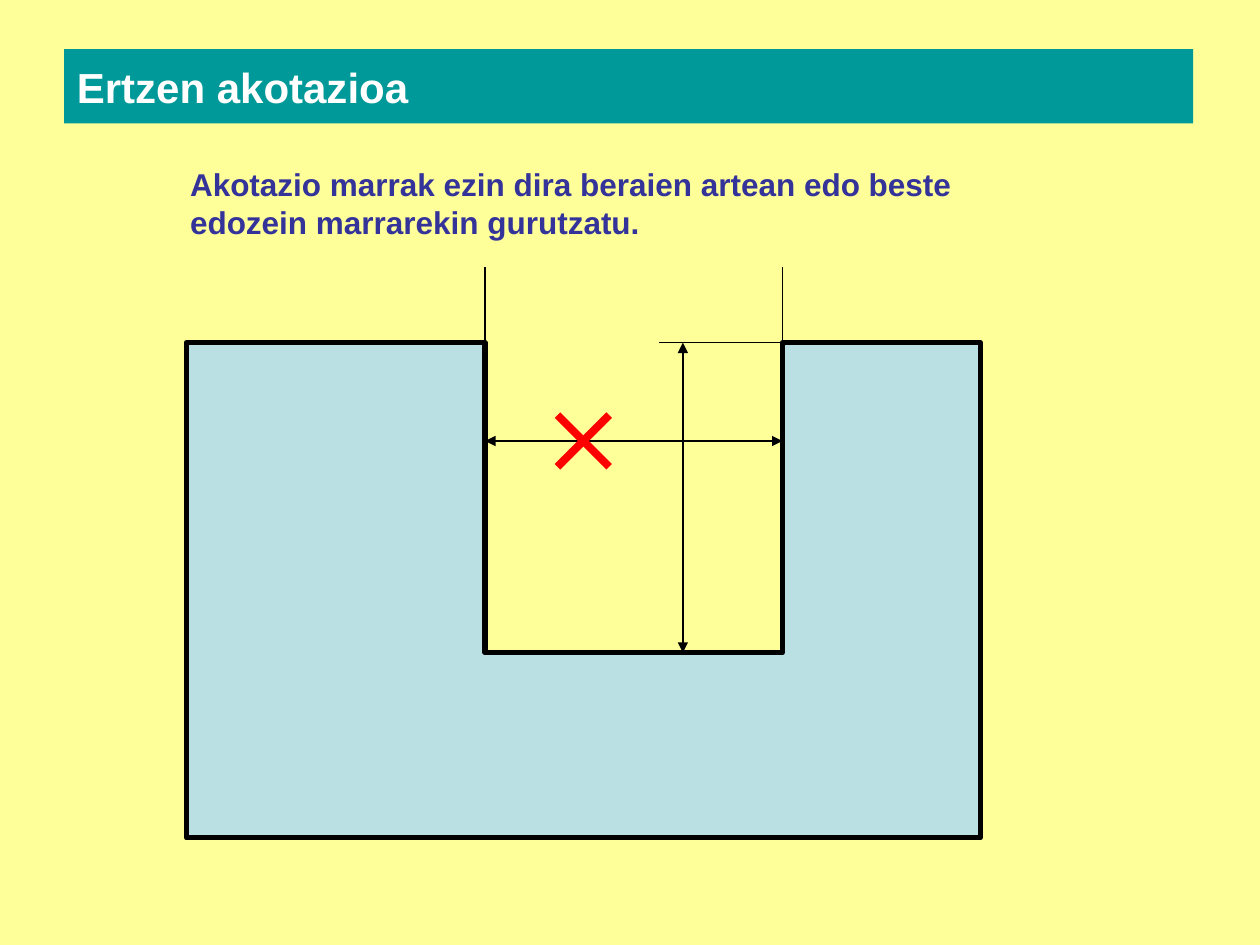
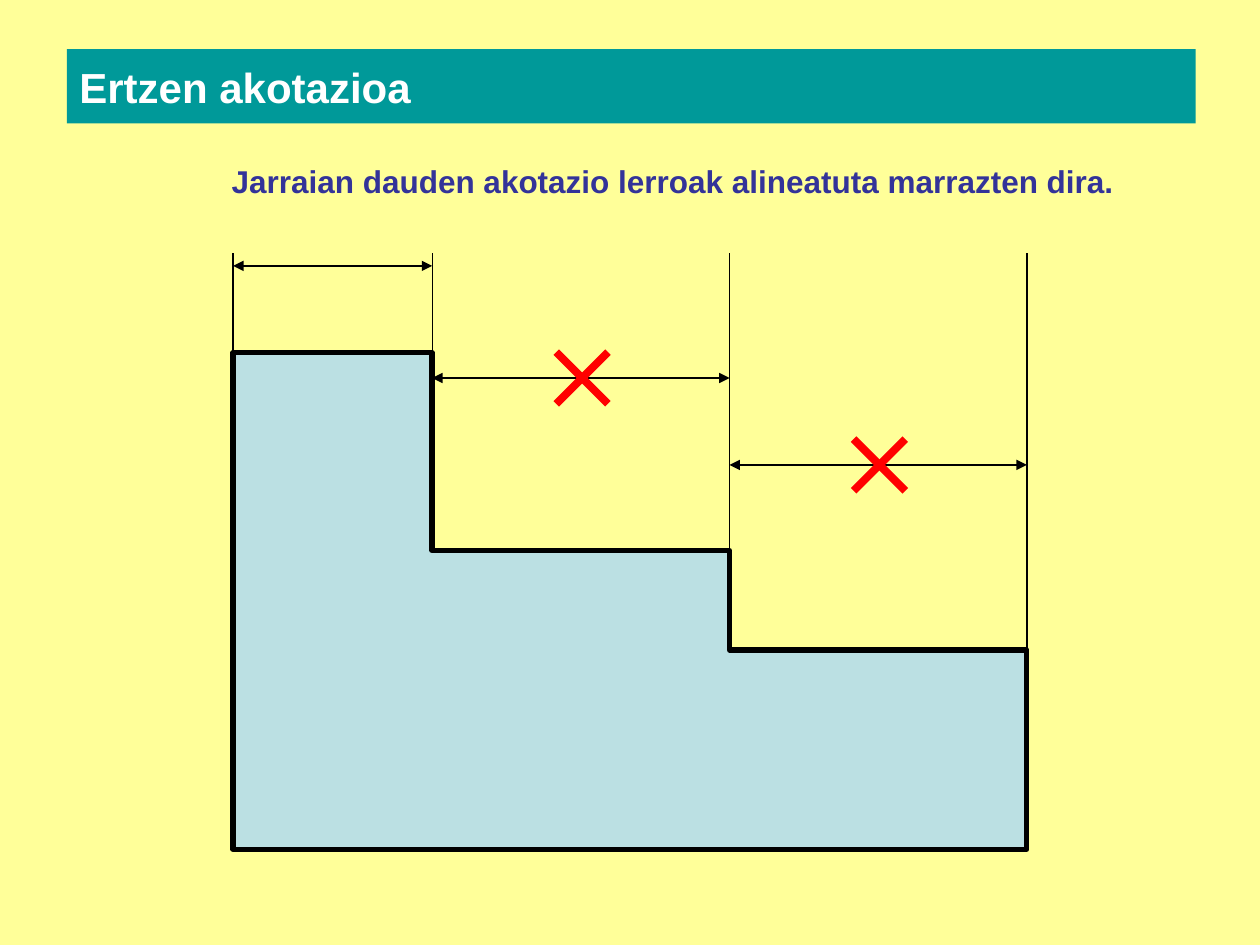
from dataclasses import dataclass

from lxml.etree import SubElement
from pptx import Presentation
from pptx.dml.color import RGBColor
from pptx.enum.shapes import MSO_CONNECTOR
from pptx.enum.text import MSO_ANCHOR, MSO_AUTO_SIZE, PP_ALIGN
from pptx.oxml.ns import qn
from pptx.util import Inches, Pt

PAPER, BAND, PIECE = "FFFF99", "009999", "BBE0E3"
INK, ERROR, RULE, WHITE = "000000", "FF0000", "333399", "FFFFFF"
TITLE = "Ertzen akotazioa"
TITLE_FONT = {"name": "Arial", "size": Pt(24), "bold": True}
RULE_FONT = {"name": "Arial", "size": Pt(18), "bold": True}
TITLE_FRAME = {
    "vertical_anchor": MSO_ANCHOR.MIDDLE,
    "auto_size": MSO_AUTO_SIZE.NONE,
    "word_wrap": True,
}
RULE_FRAME = {"auto_size": MSO_AUTO_SIZE.SHAPE_TO_FIT_TEXT, "word_wrap": True}
CROSS_SIZE = 0.41

Point = tuple[float, float]


@dataclass(frozen=True)
class Stroke:
    start: Point
    end: Point
    width: float = 0.75
    colour: str = INK
    arrows: bool = False


@dataclass(frozen=True)
class Lesson:
    rule: str
    rule_box: tuple[float, float, float, float]
    band_left: float
    outline: list[Point]
    strokes: list[Stroke]
    crosses: list[Point]


def rgb(colour: str) -> RGBColor:
    return RGBColor.from_string(colour)


def paint(fill, colour: str) -> None:
    fill.solid()
    fill.fore_color.rgb = rgb(colour)


def apply(target, values: dict) -> None:
    for attribute, value in values.items():
        setattr(target, attribute, value)


def place(shape, left: float, top: float, width: float, height: float) -> None:
    apply(shape, {
        "left": Inches(left), "top": Inches(top),
        "width": Inches(width), "height": Inches(height),
    })


def write(shape, text: str, frame: dict, font: dict, colour: str) -> None:
    apply(shape.text_frame, frame)
    paragraph = shape.text_frame.paragraphs[0]
    paragraph.alignment = PP_ALIGN.LEFT
    run = paragraph.add_run()
    run.text = text
    apply(run.font, font)
    run.font.color.rgb = rgb(colour)


def vertical(x: float, top: float, bottom: float) -> Stroke:
    return Stroke((x, top), (x, bottom))


def dimension(start: Point, end: Point) -> Stroke:
    return Stroke(start, end, width=1.5, arrows=True)


def draw_stroke(shapes, stroke: Stroke) -> None:
    ends = [Inches(value) for value in stroke.start + stroke.end]
    connector = shapes.add_connector(MSO_CONNECTOR.STRAIGHT, *ends)
    connector.line.width = Pt(stroke.width)
    connector.line.color.rgb = rgb(stroke.colour)
    if stroke.arrows:
        for end in ("a:headEnd", "a:tailEnd"):
            SubElement(connector.get_or_add_ln(), qn(end), type="triangle")
    SubElement(connector.element.spPr, qn("a:effectLst"))


def draw_cross(shapes, centre: Point) -> None:
    x, y = centre
    half = CROSS_SIZE / 2
    group = shapes.add_group_shape()
    for side in (-half, half):
        stroke = Stroke((x + side, y - half), (x - side, y + half), 4.5, ERROR)
        draw_stroke(group.shapes, stroke)


def draw_piece(shapes, outline: list[Point]) -> None:
    first, *others = [(Inches(x), Inches(y)) for x, y in outline]
    builder = shapes.build_freeform(*first)
    builder.add_line_segments(others, close=True)
    piece = builder.convert_to_shape()
    piece.shadow.inherit = False
    paint(piece.fill, PIECE)
    piece.line.color.rgb = rgb(INK)
    piece.line.width = Pt(3)


def draw_lesson(prs, lesson: Lesson) -> None:
    slide = prs.slides.add_slide(prs.slide_layouts.get_by_name("Title Only"))
    band = slide.shapes.title
    place(band, lesson.band_left, 0.39, 8.96, 0.59)
    paint(band.fill, BAND)
    write(band, TITLE, TITLE_FRAME, TITLE_FONT, WHITE)
    rule = slide.shapes.add_textbox(*[Inches(value) for value in lesson.rule_box])
    write(rule, lesson.rule, RULE_FRAME, RULE_FONT, RULE)
    draw_piece(slide.shapes, lesson.outline)
    for stroke in lesson.strokes:
        draw_stroke(slide.shapes, stroke)
    for centre in lesson.crosses:
        draw_cross(slide.shapes, centre)


def notch_lesson() -> Lesson:
    left, notch_left, notch_right, right = 1.48, 3.85, 6.21, 7.78
    top, width_level, notch_bottom, bottom = 2.72, 3.5, 5.18, 6.65
    depth_x = 5.42
    return Lesson(
        rule="Akotazio marrak ezin dira beraien artean edo beste "
             "edozein marrarekin gurutzatu.",
        rule_box=(1.41, 1.26, 6.38, 0.71),
        band_left=0.51,
        outline=[
            (left, top), (notch_left, top), (notch_left, notch_bottom),
            (notch_right, notch_bottom), (notch_right, top), (right, top),
            (right, bottom), (left, bottom),
        ],
        strokes=[
            dimension((notch_left, width_level), (notch_right, width_level)),
            dimension((depth_x, top), (depth_x, notch_bottom)),
            Stroke((notch_right, top), (5.23, top)),
            *[vertical(x, 2.12, top) for x in (notch_left, notch_right)],
        ],
        crosses=[(4.63, width_level)],
    )


def stairs_lesson() -> Lesson:
    edges = [1.85, 3.43, 5.79, 8.15]
    treads = [2.8, 4.37, 5.16]
    levels = [2.11, 3, 3.69]
    bottom = 6.74
    steps = list(zip(edges, edges[1:], treads, levels))
    return Lesson(
        rule="Jarraian dauden akotazio lerroak alineatuta marrazten dira.",
        rule_box=(1.74, 1.24, 7.24, 0.4),
        band_left=0.53,
        outline=[
            *[(x, tread) for start, end, tread, _ in steps for x in (start, end)],
            (edges[-1], bottom), (edges[0], bottom),
        ],
        strokes=[
            *[dimension((start, level), (end, level))
              for start, end, _, level in steps],
            *[vertical(x, 2.01, tread)
              for x, tread in zip(edges, [treads[0], *treads])],
        ],
        crosses=[((start + end) / 2 + 0.01, level)
                 for start, end, _, level in steps[1:]],
    )


def main() -> None:
    prs = Presentation()
    prs.slide_width, prs.slide_height = Inches(10), Inches(7.5)
    paint(prs.slide_master.background.fill, PAPER)
    for lesson in (notch_lesson(), stairs_lesson()):
        draw_lesson(prs, lesson)
    prs.save("out.pptx")


if __name__ == "__main__":
    main()
